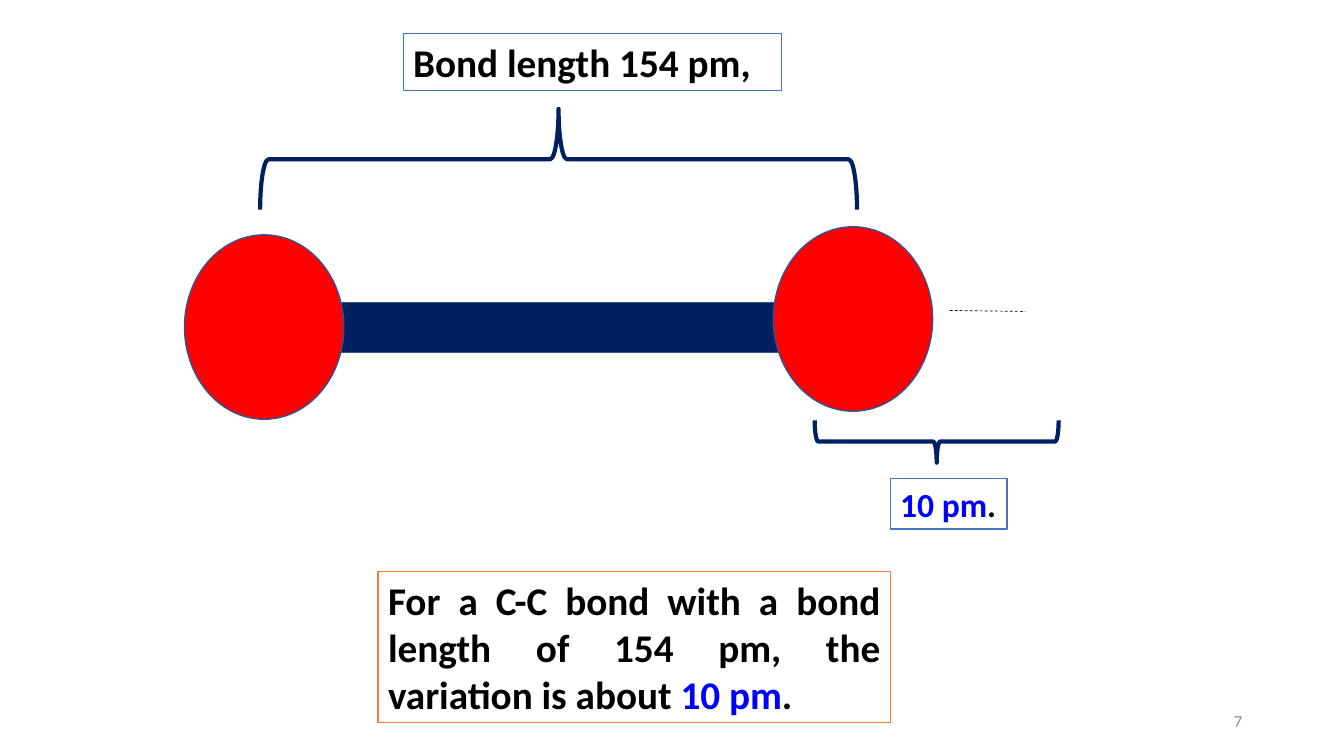
from dataclasses import dataclass

from lxml.etree import SubElement
from pptx import Presentation
from pptx.dml.color import RGBColor
from pptx.enum.dml import MSO_LINE
from pptx.enum.shapes import MSO_CONNECTOR, MSO_SHAPE
from pptx.enum.text import MSO_ANCHOR, PP_ALIGN
from pptx.oxml.ns import qn
from pptx.util import Emu, Pt

SCALE = 9144  # EMU per px, 100 px to the inch
FONT = "Calibri"
COLORS = {
    "navy": "002060",
    "red": "FF0000",
    "edge": "325491",
    "white": "FFFFFF",
    "orange": "ED7D31",
    "blue": "4472C4",
    "link": "0000FF",
    "black": "000000",
    "gray": "8C8C8C",
}


@dataclass(frozen=True)
class Box:
    left: int
    top: int
    width: int
    height: int


@dataclass(frozen=True)
class Form:
    kind: MSO_SHAPE
    box: Box
    fill: str | None
    line: str
    weight: int = 1
    turn: int = 0


@dataclass(frozen=True)
class Run:
    text: str
    color: str = "black"


@dataclass(frozen=True)
class Label:
    box: Box
    runs: tuple[Run, ...]
    size: int
    line: str | None = None
    align: PP_ALIGN = PP_ALIGN.LEFT
    anchor: MSO_ANCHOR = MSO_ANCHOR.TOP
    bold: bool = True
    wrap: bool = True


FORMS = (
    Form(MSO_SHAPE.RECTANGLE, Box(283, 300, 508, 50), "navy", "edge"),
    Form(MSO_SHAPE.OVAL, Box(183, 233, 158, 183), "red", "edge"),
    Form(MSO_SHAPE.OVAL, Box(767, 225, 158, 183), "red", "edge"),
    Form(MSO_SHAPE.RIGHT_BRACE, Box(504, -138, 100, 592), None, "navy", 3, 270),
    Form(MSO_SHAPE.RIGHT_BRACE, Box(908, 317, 42, 242), None, "navy", 3, 90),
)

LABELS = (
    Label(Box(400, 33, 375, 57), (Run("Bond length 154 pm,"),), 28, "blue"),
    Label(Box(883, 475, 116, 50), (Run("10 pm", "link"), Run(".")), 24, "blue",
          wrap=False),
    Label(
        Box(375, 567, 508, 150),
        (
            Run("For a C-C bond with a bond length of 154 pm, the variation is about "),
            Run("10 pm", "link"),
            Run("."),
        ),
        28,
        "orange",
        align=PP_ALIGN.JUSTIFY,
    ),
    Label(Box(942, 695, 300, 40), (Run("7", "gray"),), 12,
          align=PP_ALIGN.RIGHT, anchor=MSO_ANCHOR.MIDDLE, bold=False),
)


def px(count: int) -> Emu:
    return Emu(count * SCALE)


def rgb(name: str) -> RGBColor:
    return RGBColor.from_string(COLORS[name])


def place(box: Box) -> tuple[Emu, Emu, Emu, Emu]:
    return px(box.left), px(box.top), px(box.width), px(box.height)


def draw_form(slide, form: Form) -> None:
    shape = slide.shapes.add_shape(form.kind, *place(form.box))
    shape.shadow.inherit = False
    shape.rotation = form.turn
    if form.fill:
        shape.fill.solid()
        shape.fill.fore_color.rgb = rgb(form.fill)
    else:
        shape.fill.background()
    shape.line.color.rgb = rgb(form.line)
    shape.line.width = Pt(form.weight)


def draw_label(slide, label: Label) -> None:
    shape = slide.shapes.add_textbox(*place(label.box))
    if label.line:
        shape.fill.solid()
        shape.fill.fore_color.rgb = rgb("white")
        shape.line.color.rgb = rgb(label.line)
        shape.line.width = Pt(1)
    frame = shape.text_frame
    frame.word_wrap = label.wrap
    frame.vertical_anchor = label.anchor
    para = frame.paragraphs[0]
    para.alignment = label.align
    for part in label.runs:
        run = para.add_run()
        run.text = part.text
        run.font.name = FONT
        run.font.size = Pt(label.size)
        run.font.bold = label.bold
        run.font.color.rgb = rgb(part.color)


def draw_dash(slide, start: tuple[int, int], end: tuple[int, int]) -> None:
    dash = slide.shapes.add_connector(
        MSO_CONNECTOR.STRAIGHT, *map(px, start), *map(px, end))
    dash.line.color.rgb = rgb("black")
    dash.line.width = Pt(0.5)
    dash.line.dash_style = MSO_LINE.DASH
    SubElement(dash._element.spPr, qn("a:effectLst"))


def main() -> None:
    deck = Presentation()
    deck.slide_width, deck.slide_height = px(1333), px(750)
    slide = deck.slides.add_slide(deck.slide_layouts[6])
    for form in FORMS:
        draw_form(slide, form)
    for label in LABELS:
        draw_label(slide, label)
    draw_dash(slide, (942, 308), (1017, 309))
    deck.save("out.pptx")


if __name__ == "__main__":
    main()
